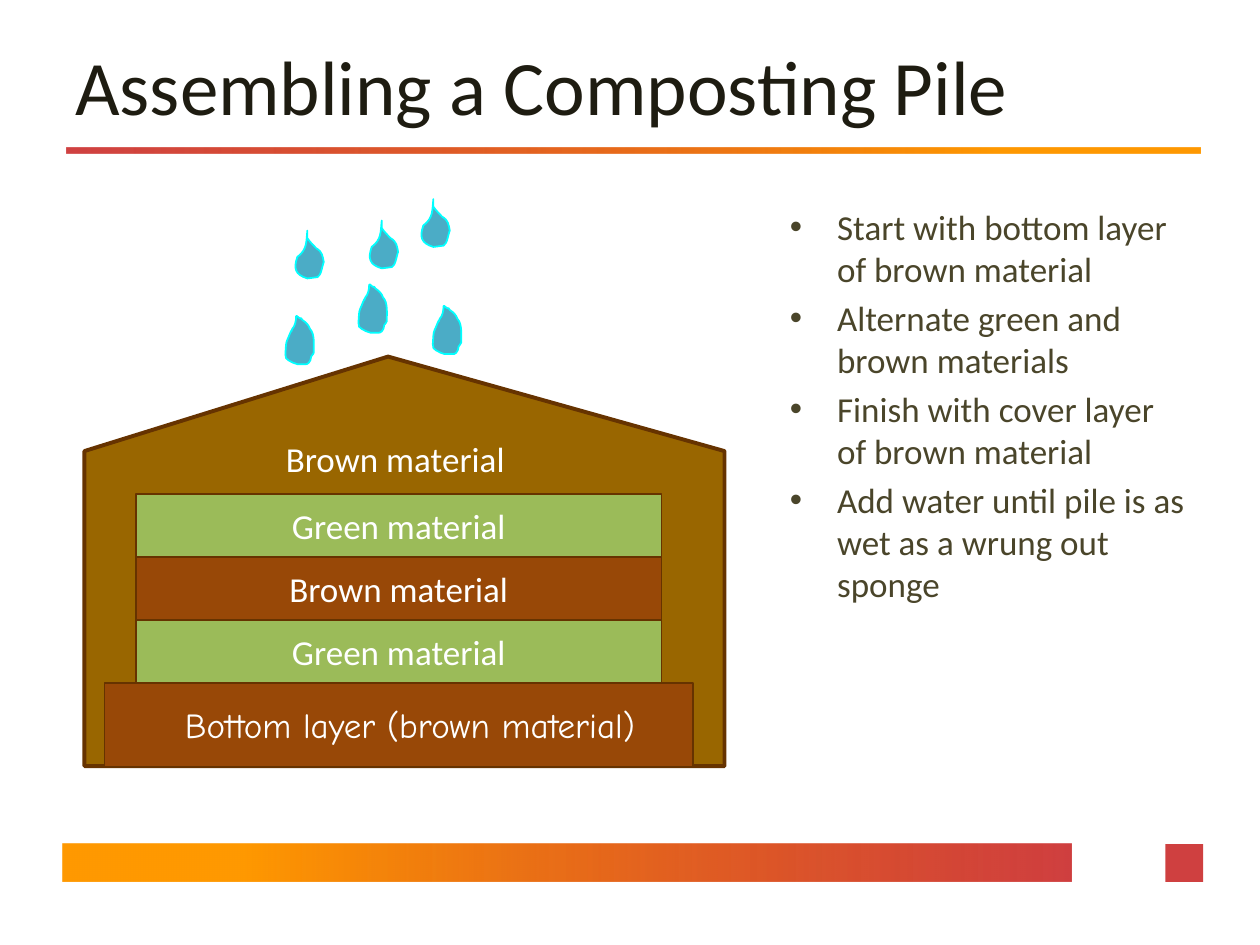
from dataclasses import dataclass

import pptx
import pptx.dml.color
import pptx.enum.shapes
import pptx.enum.text
import pptx.oxml.ns
import pptx.util
from lxml import etree

Inches = pptx.util.Inches
Pt = pptx.util.Pt
ALIGN = pptx.enum.text.PP_ALIGN
ANCHOR = pptx.enum.text.MSO_ANCHOR
qn = pptx.oxml.ns.qn

COLORS = {
    "title": "1E1C11", "body": "4A452A", "white": "FFFFFF",
    "red": "C00000", "orange": "FF9900",
    "pile": "996600", "brown": "984807", "edge": "663300",
    "green": "9BBB59", "water": "4BACC6", "rim": "00FFFF",
}


@dataclass
class Box:
    left: float
    top: float
    width: float
    height: float


@dataclass
class Style:
    size: float = 20
    color: str = "white"
    font: str = "Calibri"


@dataclass
class Layer:
    box: Box
    fill: str
    label: str = ""


@dataclass
class Drop:
    left: float
    top: float
    curve: list


# Drop outlines in hundredths of an inch: a start point, then
# two control points and an end point for each curve
TEAR = [
    (11, 0), (10, 9), (11, 15), (3, 21), (0, 30), (1, 35), (11, 38),
    (14, 37), (16, 38), (19, 37), (22, 36), (23, 27), (24, 25),
    (23, 20), (23, 17), (18, 14), (16, 12), (13, 9), (11, 6),
]
BLOB = [
    (10, 1), (10, 5), (9, 9), (7, 11), (5, 17), (8, 8), (5, 15),
    (4, 18), (2, 21), (2, 24), (2, 28), (0, 35), (4, 36),
    (6, 38), (9, 38), (11, 39), (13, 39), (15, 39), (18, 39),
    (18, 39), (19, 39), (20, 38), (21, 37), (22, 35), (22, 33),
    (23, 32), (24, 30), (24, 30), (24, 24), (25, 15), (21, 11),
    (20, 8), (18, 6), (15, 4), (13, 1), (15, 4), (12, 2),
    (10, 1), (11, 0), (10, 1),
]
DROPS = [
    Drop(2.83, 2.25, BLOB), Drop(3.33, 1.58, TEAR), Drop(2.92, 1.75, TEAR),
    Drop(3.42, 2.42, BLOB), Drop(2.25, 2.5, BLOB), Drop(2.33, 1.83, TEAR),
]
PILE = [(1.17, 6.08), (0.67, 6.08), (0.67, 3.58), (3.08, 2.83), (5.75, 3.58), (5.75, 6.08)]
LAYERS = [Layer(Box(0.83, 5.42, 4.67, 0.67), "brown")] + [
    Layer(Box(1.08, 4.92 - 0.5 * i, 4.17, 0.5), name.lower(), f"{name} material")
    for i, name in enumerate(["Green", "Brown", "Green"])
]
STEPS = [
    "Start with bottom layer of brown material",
    "Alternate green and brown materials",
    "Finish with cover layer of brown material",
    "Add water until pile is as wet as a wrung out sponge",
]
INDENT = Inches(3 / 8)


def rgb(name: str):
    return pptx.dml.color.RGBColor.from_string(COLORS[name])


def place(box: Box) -> list:
    return [Inches(v) for v in (box.left, box.top, box.width, box.height)]


def paint(shape, fill: str, line: str, width: float) -> None:
    shape.shadow.inherit = False
    shape.fill.solid()
    shape.fill.fore_color.rgb = rgb(fill)
    shape.line.color.rgb = rgb(line)
    shape.line.width = Pt(width)


def add_rect(slide, box: Box):
    kind = pptx.enum.shapes.MSO_SHAPE.RECTANGLE
    shape = slide.shapes.add_shape(kind, *place(box))
    shape.shadow.inherit = False
    return shape


def add_tint(node, name: str, alpha: int) -> None:
    tint = etree.SubElement(node, qn("a:srgbClr"), val=COLORS[name])
    if alpha < 100:
        etree.SubElement(tint, qn("a:alpha"), val=str(alpha * 1000))


def add_bar(slide, box: Box, angle: float, alpha: int) -> None:
    bar = add_rect(slide, box)
    bar.line.fill.background()
    bar.fill.gradient()
    bar.fill.gradient_angle = angle
    stops = bar._element.spPr.find(".//" + qn("a:gsLst"))
    for old in list(stops):
        stops.remove(old)
    for pos, name, part in ((0, "red", alpha), (82, "orange", 100), (98, "orange", 100)):
        stop = etree.SubElement(stops, qn("a:gs"), pos=str(pos * 1000))
        add_tint(stop, name, part)


def add_run(para, text: str, style: Style) -> None:
    run = para.add_run()
    run.text = text
    run.font.size = Pt(style.size)
    run.font.name = style.font
    run.font.color.rgb = rgb(style.color)


def add_text(slide, box: Box, text: str, style: Style, align=ALIGN.LEFT, anchor=ANCHOR.TOP):
    frame = slide.shapes.add_textbox(*place(box)).text_frame
    frame.word_wrap = True
    frame.vertical_anchor = anchor
    para = frame.paragraphs[0]
    para.alignment = align
    add_run(para, text, style)
    return para


def add_list(slide, box: Box, items: list, style: Style) -> None:
    frame = slide.shapes.add_textbox(*place(box)).text_frame
    frame.word_wrap = True
    for i, item in enumerate(items):
        para = frame.add_paragraph() if i else frame.paragraphs[0]
        if i:
            para.space_before = Pt(4)
        props = para._p.get_or_add_pPr()
        props.set("marL", str(INDENT))
        props.set("indent", str(-INDENT))
        etree.SubElement(props, qn("a:buFont"), typeface="Arial")
        etree.SubElement(props, qn("a:buChar"), char="•")
        add_run(para, item, style)


def add_free(slide, points: list, fill: str, line: str, width: float):
    dots = [(Inches(x), Inches(y)) for x, y in points]
    draft = slide.shapes.build_freeform(*dots[0])
    draft.add_line_segments(dots[1:], close=True)
    shape = draft.convert_to_shape()
    paint(shape, fill, line, width)
    return shape


def add_drop(slide, drop: Drop) -> None:
    points = [(drop.left + x / 100, drop.top + y / 100) for x, y in drop.curve]
    shape = add_free(slide, points, "water", "rim", 1)
    # Join each three line points into one cubic curve
    lines = list(shape._element.iter(qn("a:lnTo")))[:len(points) - 1]
    for i in range(0, len(lines), 3):
        curve = etree.Element(qn("a:cubicBezTo"))
        lines[i].addprevious(curve)
        for part in lines[i:i + 3]:
            curve.append(part[0])
            part.getparent().remove(part)


def add_layer(slide, layer: Layer) -> None:
    shape = add_rect(slide, layer.box)
    paint(shape, layer.fill, "edge", 1)
    if layer.label:
        frame = shape.text_frame
        frame.word_wrap = False
        frame.vertical_anchor = ANCHOR.MIDDLE
        frame.paragraphs[0].alignment = ALIGN.CENTER
        add_run(frame.paragraphs[0], layer.label, Style())


def main() -> None:
    deck = pptx.Presentation()
    deck.slide_width, deck.slide_height = Inches(10), Inches(7.5)
    slide = deck.slides.add_slide(deck.slide_layouts[6])

    # Rule below the title and footer bars
    add_bar(slide, Box(0.53, 1.17, 9, 0.05), 0, 74)
    square = add_rect(slide, Box(9.25, 6.7, 0.3, 0.3))
    square.line.fill.background()
    square.fill.solid()
    square.fill.fore_color.rgb = rgb("red")
    tint = square._element.spPr.find(".//" + qn("a:srgbClr"))
    etree.SubElement(tint, qn("a:alpha"), val="75000")
    add_bar(slide, Box(0.5, 6.7, 8, 0.3), 180, 75)

    # Title and steps
    add_text(slide, Box(0.5, 0.17, 9, 1), "Assembling a Composting Pile",
             Style(44, "title"), anchor=ANCHOR.MIDDLE)
    add_list(slide, Box(6.17, 1.58, 3.36, 4.95), STEPS, Style(color="body"))

    # Pile with its layers
    add_free(slide, PILE, "pile", "edge", 2.25)
    for layer in LAYERS:
        add_layer(slide, layer)

    # Water drops
    for drop in DROPS:
        add_drop(slide, drop)

    # Labels of the bottom and cover layers
    base = add_text(slide, Box(0.92, 5.5, 4.67, 0.45), "Bottom layer (brown material)",
                    Style(font="Comic Neue"), ALIGN.CENTER)
    base.line_spacing = 1.1
    add_text(slide, Box(2.17, 3.42, 2, 0.44), "Brown material", Style())

    deck.save("out.pptx")


if __name__ == "__main__":
    main()
